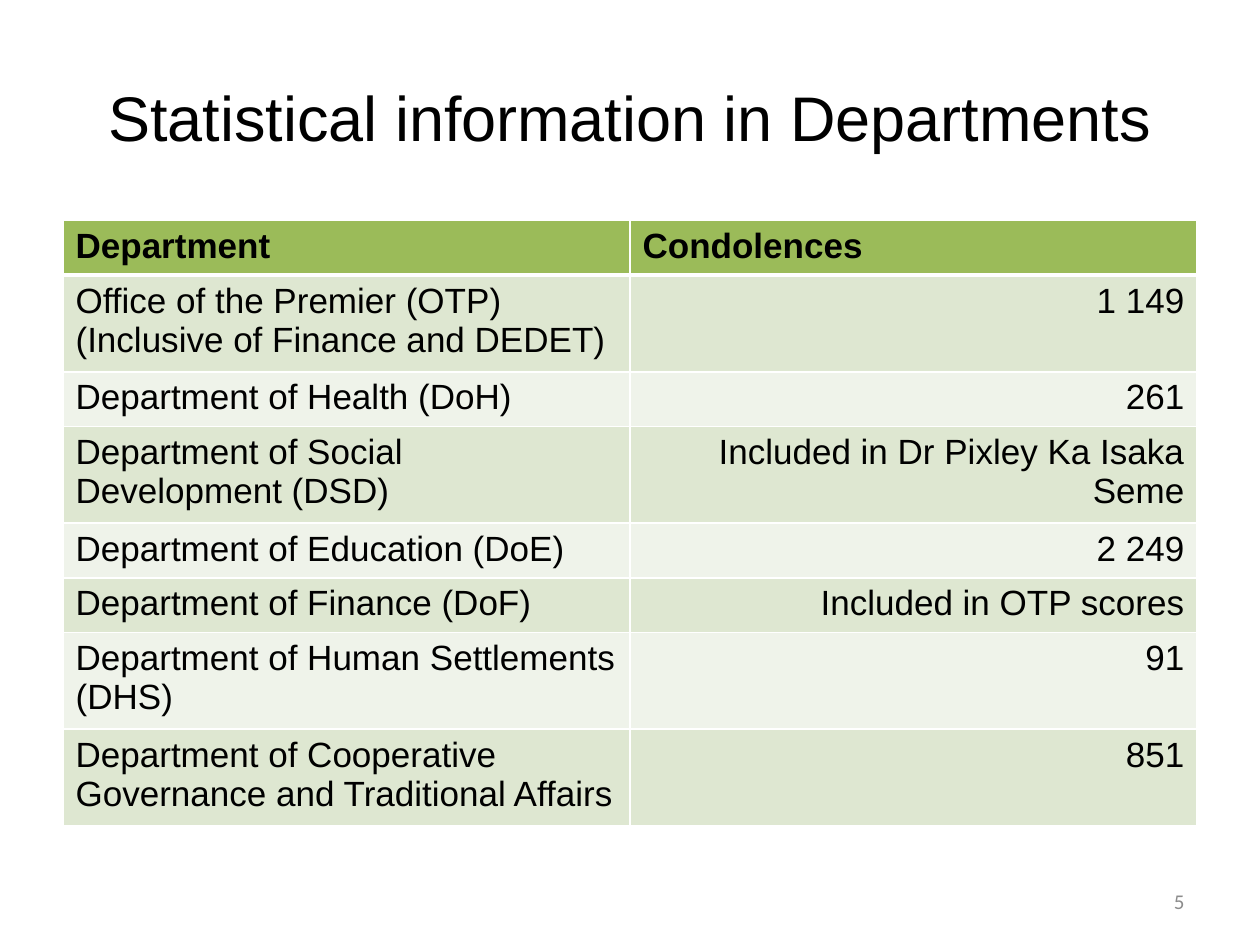
from lxml.etree import SubElement as Sub
from pptx import Presentation
from pptx.dml.color import RGBColor as RGB
from pptx.enum.text import MSO_ANCHOR as Anchor, PP_ALIGN as Align
from pptx.oxml.ns import qn
from pptx.util import Inches, Pt


def tint(code):
    return RGB.from_string(code)


class Deck:
    font = "Arial"
    ink = "000000"
    head = "9BBB59"
    bands = ("DEE7D1", "EFF3EA")
    rule = "FFFFFF"

    def __init__(self):
        self.prs = Presentation()
        self.prs.slide_width = Inches(10)
        self.prs.slide_height = Inches(7.5)
        self.slide = self.prs.slides.add_slide(self.prs.slide_layouts[6])

    def label(self, frame, words, size, align, color=ink, **form):
        par = frame.paragraphs[0]
        par.alignment = align
        run = par.add_run()
        run.text = words
        form = {"name": self.font, "size": Pt(size), "bold": False} | form
        for key, value in form.items():
            setattr(run.font, key, value)
        run.font.color.rgb = tint(color)

    def text(self, box, words, size, align, **form):
        frame = self.slide.shapes.add_textbox(*map(Inches, box)).text_frame
        frame.word_wrap = True
        frame.vertical_anchor = Anchor.MIDDLE
        self.label(frame, words, size, align, **form)

    def edge(self, cell, widths):
        props = cell._tc.get_or_add_tcPr()
        for side, width in widths.items():
            line = Sub(props, qn(f"a:ln{side}"), w=str(Pt(width)))
            fill = Sub(line, qn("a:solidFill"))
            Sub(fill, qn("a:srgbClr"), val=self.rule)

    def table(self, box, rows, highs, size):
        grid = self.slide.shapes.add_table(
            len(rows), len(rows[0]), *map(Inches, box)).table
        for r, row in enumerate(rows):
            grid.rows[r].height = Inches(highs[r])
            top = r == 0
            for c, words in enumerate(row):
                cell = grid.cell(r, c)
                self.edge(cell, {"L": 1, "R": 1, "T": 3 if r == 1 else 1,
                                 "B": 3 if top else 1})
                cell.fill.solid()
                shade = self.head if top else self.bands[(r - 1) % 2]
                cell.fill.fore_color.rgb = tint(shade)
                align = Align.RIGHT if c and not top else Align.LEFT
                self.label(cell.text_frame, words, size, align, bold=top)

    def save(self):
        self.prs.save("out.pptx")


def main():
    one, two = 0.41, 0.72
    rows = [
        ("Department", "Condolences"),
        ("Office of the Premier (OTP) (Inclusive of Finance and DEDET)",
         "1 149"),
        ("Department of Health (DoH)", "261"),
        ("Department of Social Development (DSD)",
         "Included in Dr Pixley Ka Isaka Seme"),
        ("Department of Education (DoE)", "2 249"),
        ("Department of Finance (DoF)", "Included in OTP scores"),
        ("Department of Human Settlements (DHS)", "91"),
        ("Department of Cooperative Governance and Traditional Affairs",
         "851"),
    ]
    highs = [two if len(row[0]) > 30 else one for row in rows]
    deck = Deck()
    deck.text((0.5, 0.3, 9, 1.25), "Statistical information in Departments",
              36, Align.CENTER)
    deck.table((0.5, 1.75, 9, sum(highs)), rows, highs, 20)
    deck.text((7.17, 6.95, 2.33, 0.4), "5", 12, Align.RIGHT,
              color="8C8C8C", name="Calibri")
    deck.save()


if __name__ == "__main__":
    main()
